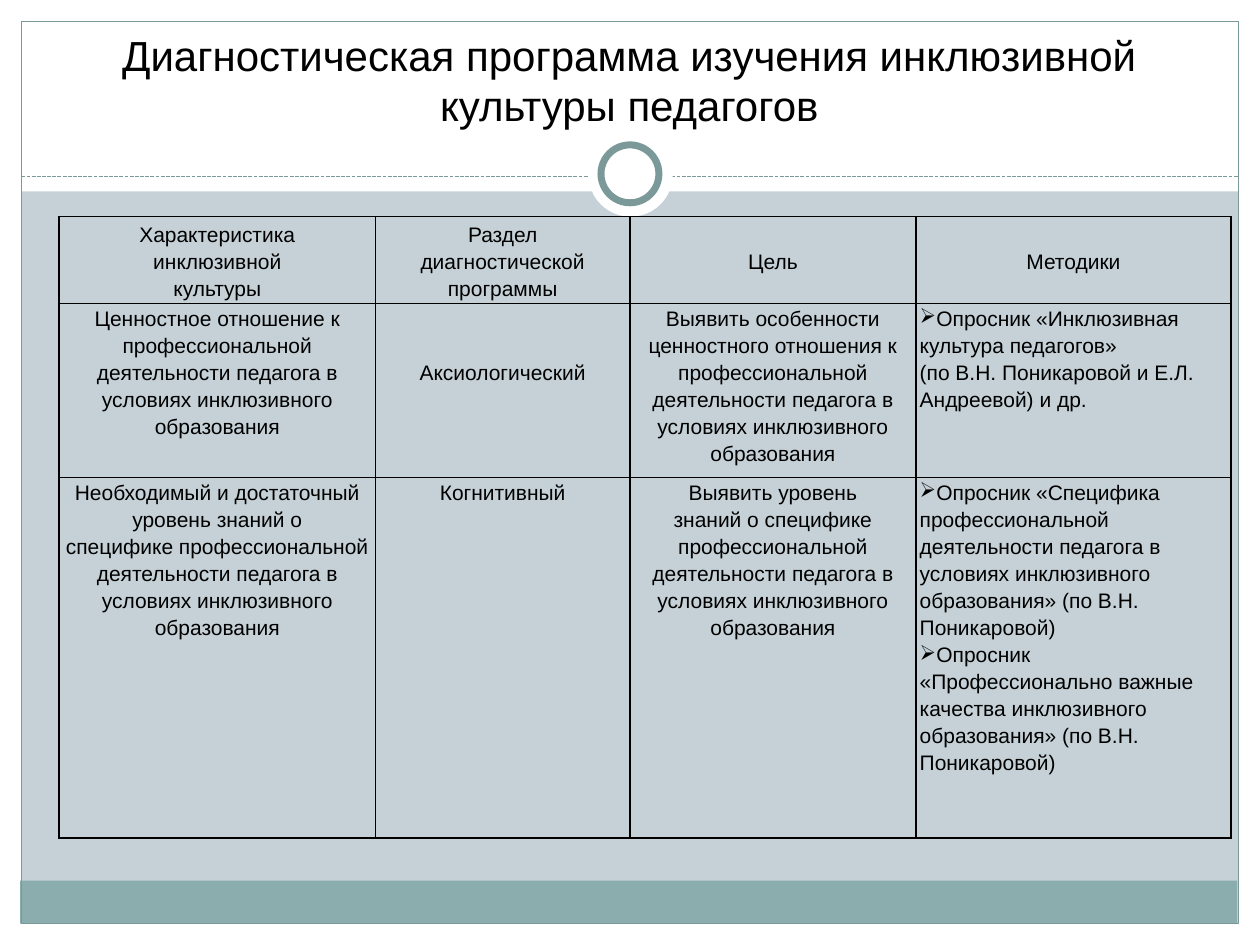
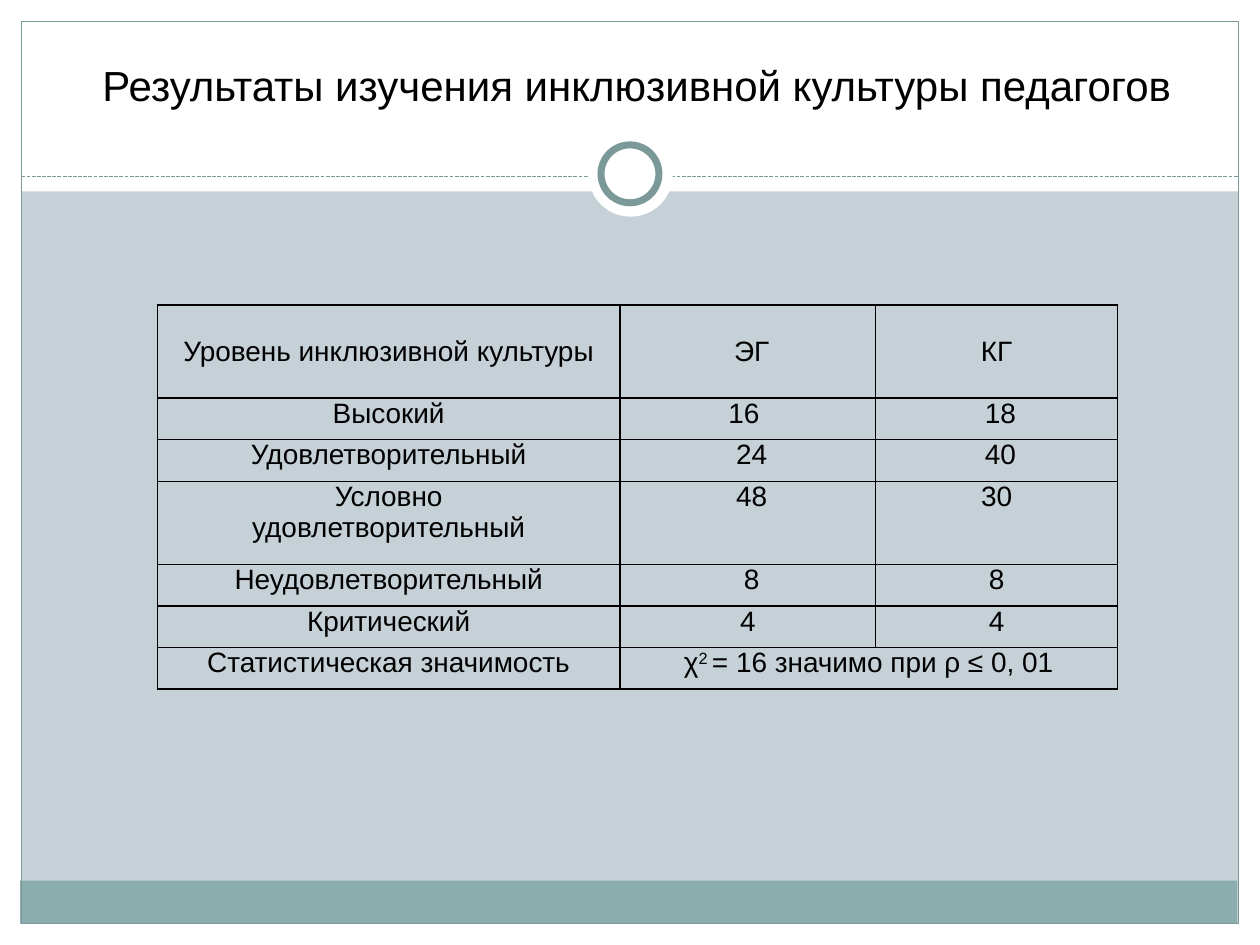
"""Build two slides on the inclusive culture of teachers: the diagnostic programme and its results."""
import pptx
import pptx.util
import pptx.dml.color
import pptx.enum.dml
import pptx.enum.shapes
import pptx.enum.text
import pptx.oxml
import pptx.oxml.ns
import lxml.etree

Inches = pptx.util.Inches
Pt = pptx.util.Pt
RGBColor = pptx.dml.color.RGBColor
Shape = pptx.enum.shapes.MSO_SHAPE
Align = pptx.enum.text.PP_ALIGN
Anchor = pptx.enum.text.MSO_ANCHOR
qn = pptx.oxml.ns.qn

COLORS = {"page": "C5D1D7", "white": "FFFFFF", "band": "8CADAE", "frame": "7C999A", "text": "000000"}
FONT = "Arial"

FRAME_PARTS = [
    (Shape.RECTANGLE, (0, 7.33, 10, 0.17), "white", 0),
    (Shape.RECTANGLE, (0, 0, 10, 1.52), "white", 0),
    (Shape.RECTANGLE, (0, 0, 0.17, 7.5), "white", 0),
    (Shape.RECTANGLE, (9.83, 0, 0.17, 7.5), "white", 0),
    (Shape.RECTANGLE, (0.16, 6.99, 9.66, 0.34), "band", 0),
    (Shape.RECTANGLE, (0.17, 0.17, 9.66, 7.16), None, 0.75),
    ("divider", (0.17, 1.4, 9.83, 1.4), None, 0.75),
    (Shape.OVAL, (4.67, 1.05, 0.67, 0.67), "white", 0),
    (Shape.OVAL, (4.77, 1.15, 0.46, 0.46), "white", 4),
]

PROGRAMME = [
    ["Характеристика\nинклюзивной\nкультуры", "Раздел\nдиагностической\nпрограммы", "Цель", "Методики"],
    [
        "Ценностное отношение к\nпрофессиональной\nдеятельности педагога в\n"
        "условиях инклюзивного\nобразования",
        "Аксиологический",
        "Выявить особенности\nценностного отношения к профессиональной\n"
        "деятельности педагога в условиях инклюзивного\nобразования",
        "➢Опросник «Инклюзивная культура педагогов»\n(по В.Н. Поникаровой и Е.Л. Андреевой) и др.",
    ],
    [
        "Необходимый и достаточный\nуровень знаний о\nспецифике профессиональной\n"
        "деятельности педагога в\nусловиях инклюзивного\nобразования",
        "Когнитивный",
        "Выявить уровень\nзнаний о специфике\nпрофессиональной\n"
        "деятельности педагога в условиях инклюзивного\nобразования",
        "➢Опросник «Специфика\nпрофессиональной\n"
        "деятельности педагога в условиях инклюзивного образования» (по В.Н. Поникаровой)\n"
        "➢Опросник «Профессионально важные качества инклюзивного образования» (по В.Н. Поникаровой)",
    ],
]

RESULTS = [
    ["Уровень инклюзивной культуры", " ЭГ", "КГ"],
    ["Высокий", "16 ", " 18"],
    ["Удовлетворительный", " 24", " 40"],
    ["Условно\nудовлетворительный", " 48", "30"],
    ["Неудовлетворительный", " 8", "8"],
    ["Критический", "4", "4"],
    ["Статистическая значимость", "χ^2 ^= 16 значимо при ρ ≤ 0, 01", ""],
]


def write_paragraph(para, text, size, align):
    """Write one paragraph; ➢ opens a bullet and ^ toggles superscript."""
    para.alignment = align
    para.font.name = FONT
    para.font.size = Pt(size)
    para.font.color.rgb = RGBColor.from_string(COLORS["text"])
    if text.startswith("➢"):
        properties = para._p.get_or_add_pPr()
        properties.set("marL", "0")
        properties.set("indent", "0")
        bullet = lxml.etree.Element(qn("a:buChar"), char="➢")
        properties.insert_element_before(bullet, "a:tabLst", "a:defRPr", "a:extLst")
    for index, piece in enumerate(text.removeprefix("➢").split("^")):
        span = para.add_run()
        span.text = piece
        if index % 2:
            span._r.get_or_add_rPr().set("baseline", "30000")


def add_grid(page, left, top, widths, heights, rows, size, side_margin, spacing):
    """Add a table with thin black borders, centred text and no fill."""
    frame = page.shapes.add_table(len(rows), len(widths), Inches(left), Inches(top),
                                  Inches(sum(widths)), Inches(sum(heights)))
    grid = frame.table
    grid.first_row = grid.horz_banding = False
    for column, width in zip(grid.columns, widths):
        column.width = Inches(width)
    for row, height in zip(grid.rows, heights):
        row.height = Inches(height)
    for row_index, texts in enumerate(rows):
        for column_index, text in enumerate(texts):
            cell = grid.cell(row_index, column_index)
            cell.margin_left = cell.margin_right = Inches(side_margin)
            cell.margin_top = cell.margin_bottom = 0
            cell.vertical_anchor = Anchor.TOP if row_index else Anchor.MIDDLE
            align = Align.LEFT if "➢" in text else Align.CENTER
            for index, line in enumerate(text.split("\n") if text else []):
                para = cell.text_frame.add_paragraph() if index else cell.text_frame.paragraphs[0]
                para.line_spacing = spacing
                write_paragraph(para, line, size, align)
            properties = cell._tc.get_or_add_tcPr()
            for side in ("a:lnL", "a:lnR", "a:lnT", "a:lnB"):
                border = lxml.etree.SubElement(properties, qn(side), w=str(Pt(1)))
                paint = lxml.etree.SubElement(border, qn("a:solidFill"))
                lxml.etree.SubElement(paint, qn("a:srgbClr"), val=COLORS["text"])
            cell.fill.background()
    return grid


deck = pptx.Presentation()
deck.slide_width = Inches(10)
deck.slide_height = Inches(7.5)

pages = []
for title, place in [
    ("Диагностическая программа изучения инклюзивной культуры педагогов", (0.33, 0.25, 9.33, 0.83)),
    ("Результаты изучения инклюзивной культуры педагогов", (0.39, 0.31, 9.33, 0.61)),
]:
    page = deck.slides.add_slide(deck.slide_layouts[6])
    pages.append(page)
    page.background.fill.solid()
    page.background.fill.fore_color.rgb = RGBColor.from_string(COLORS["page"])
    for kind, spot, fill, line_width in FRAME_PARTS:
        spot = [Inches(value) for value in spot]
        if kind == "divider":
            part = page.shapes.add_connector(pptx.enum.shapes.MSO_CONNECTOR.STRAIGHT, *spot)
            part.line.dash_style = pptx.enum.dml.MSO_LINE.SQUARE_DOT
            lxml.etree.SubElement(part._element.spPr, qn("a:effectLst"))
        else:
            part = page.shapes.add_shape(kind, *spot)
            part.shadow.inherit = False
            if fill:
                part.fill.solid()
                part.fill.fore_color.rgb = RGBColor.from_string(COLORS[fill])
            else:
                part.fill.background()
        if line_width:
            part.line.color.rgb = RGBColor.from_string(COLORS["frame"])
            part.line.width = Pt(line_width)
        else:
            part.line.fill.background()
    box = page.shapes.add_textbox(*[Inches(value) for value in place])
    box.text_frame.word_wrap = True
    box.text_frame.vertical_anchor = Anchor.BOTTOM
    write_paragraph(box.text_frame.paragraphs[0], title, 24, Align.CENTER)

programme_page, results_page = pages

programme = add_grid(programme_page, 0.47, 1.72, [2.51, 2.02, 2.27, 2.5], [0.64, 1.29, 2.86],
                     PROGRAMME, 12, 0.03, 1.15)
programme.cell(1, 1).margin_top = Inches(0.43)

results = add_grid(results_page, 1.25, 2.42, [3.67, 2.03, 1.92], [0.74, 0.33, 0.33, 0.66, 0.33, 0.33, 0.33],
                   RESULTS, 16, 0, 1.0)
results.cell(6, 1).merge(results.cell(6, 2))

deck.save("out.pptx")
